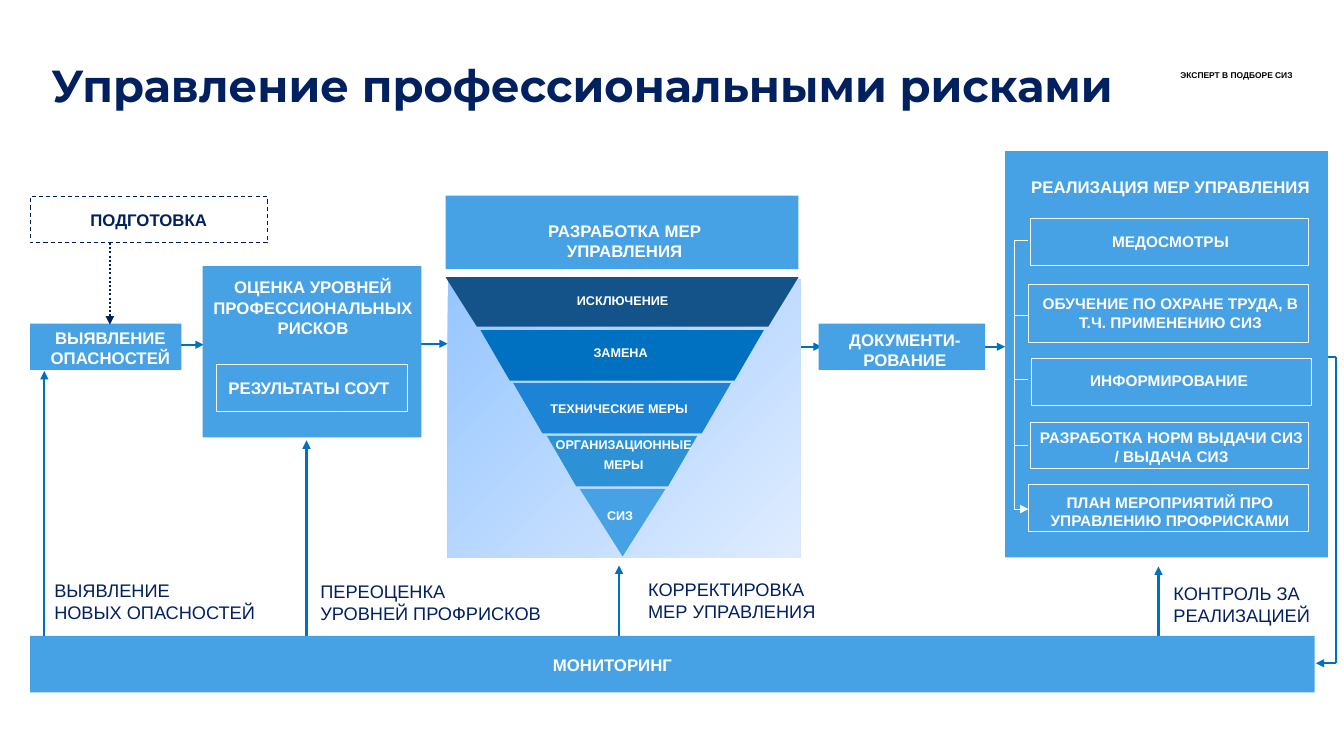
from dataclasses import dataclass
from typing import Optional

from lxml.etree import SubElement
from pptx import Presentation
from pptx.dml.color import RGBColor
from pptx.enum.dml import MSO_LINE
from pptx.enum.shapes import MSO_CONNECTOR, MSO_SHAPE
from pptx.enum.text import PP_ALIGN
from pptx.oxml.ns import qn
from pptx.slide import Slide
from pptx.util import Emu, Inches, Pt

WIDE, HIGH = Inches(13.33), Inches(7.5)
COLS, ROWS = 133.3, 75
INK = {
    "sky": "47A1E5", "blue": "0070C0", "navy": "002060", "white": "FFFFFF",
    "pale": "F2F2F2", "black": "000000", "deep": "13538A", "mid": "1D83D5",
    "soft": "2C92D5", "dawn": "96C6FF", "haze": "DFECFF",
}


@dataclass
class Box:
    x: float
    y: float
    w: float
    h: float
    fill: Optional[str] = "sky"
    edge: Optional[str] = None
    dash: Optional[MSO_LINE] = None
    kind: MSO_SHAPE = MSO_SHAPE.RECTANGLE
    turn: int = 0


@dataclass
class Label:
    x: float
    y: float
    w: float
    h: float
    words: str
    size: float = 12
    ink: str = "white"
    bold: bool = True
    font: str = "Arial"
    align: PP_ALIGN = PP_ALIGN.CENTER
    gap: float = 1
    side: float = 0
    top: float = 0


@dataclass
class Line:
    x: float
    y: float
    x2: float
    y2: float
    ink: str = "blue"
    size: float = 1.5
    tip: bool = True
    dash: Optional[MSO_LINE] = None


def across(cols: float) -> Emu:
    return Emu(round(WIDE * cols / COLS))


def down(rows: float) -> Emu:
    return Emu(round(HIGH * rows / ROWS))


def tint(name: str) -> RGBColor:
    return RGBColor.from_string(INK[name])


def draw_box(slide: Slide, box: Box):
    shape = slide.shapes.add_shape(
        box.kind, across(box.x), down(box.y), across(box.w), down(box.h))
    shape.shadow.inherit = False
    shape.rotation = box.turn
    if box.fill:
        shape.fill.solid()
        shape.fill.fore_color.rgb = tint(box.fill)
    else:
        shape.fill.background()
    if box.edge:
        shape.line.color.rgb = tint(box.edge)
        shape.line.width = Pt(0.75)
        shape.line.dash_style = box.dash
    else:
        shape.line.fill.background()
    return shape


def draw_label(slide: Slide, label: Label) -> None:
    frame = slide.shapes.add_textbox(
        across(label.x), down(label.y), across(label.w), down(label.h)).text_frame
    frame.word_wrap = True
    frame.margin_left = frame.margin_right = across(label.side)
    frame.margin_top = frame.margin_bottom = down(label.top)
    frame.text = label.words
    for para in frame.paragraphs:
        para.alignment = label.align
        para.line_spacing = label.gap
        para.font.name = label.font
        para.font.size = Pt(label.size)
        para.font.bold = label.bold
        para.font.color.rgb = tint(label.ink)


def draw_line(slide: Slide, line: Line) -> None:
    link = slide.shapes.add_connector(
        MSO_CONNECTOR.STRAIGHT, across(line.x), down(line.y),
        across(line.x2), down(line.y2))
    link.line.color.rgb = tint(line.ink)
    link.line.width = Pt(line.size)
    link.line.dash_style = line.dash
    if line.tip:
        SubElement(link.line._get_or_add_ln(), qn("a:tailEnd"), type="triangle")
    SubElement(link._element.spPr, qn("a:effectLst"))


def draw_flow(slide: Slide) -> None:
    for x, y in ((16.2, 34.2), (40.4, 34.1), (77.5, 34.4), (95.7, 34.4)):
        draw_line(slide, Line(x, y, x + 4, y))
    for x, top in ((4.4, 36.8), (30.4, 43.7), (61.4, 56.1), (114.9, 56.2)):
        draw_line(slide, Line(x, 63.1, x, top))
    draw_line(slide, Line(132.5, 35.4, 131.5, 35.4, tip=False))
    draw_line(slide, Line(132.5, 65.8, 132.5, 35.4, tip=False))
    draw_line(slide, Line(132.5, 65.8, 130.5, 65.8))


def draw_stages(slide: Slide) -> None:
    for box in (
        Box(3, 32.1, 15, 4.6), Box(20.1, 26.4, 21.7, 17),
        Box(44.2, 19.4, 35, 7.3), Box(81.2, 32.1, 16.5, 4.6),
        Box(99.7, 15, 32, 40.3), Box(3, 63.1, 127.4, 5.6),
        Box(21.5, 36.2, 18.9, 4.6, edge="pale"),
        Box(3, 19.5, 23.5, 4.6, None, "navy", MSO_LINE.DASH),
    ):
        draw_box(slide, box)
    for label in (
        Label(3, 32.5, 15.9, 4, "ВЫЯВЛЕНИЕ\nОПАСНОСТЕЙ"),
        Label(19.3, 27.5, 23.5, 6.1, "ОЦЕНКА УРОВНЕЙ ПРОФЕССИОНАЛЬНЫХ РИСКОВ"),
        Label(18.9, 37.5, 23.5, 2, "РЕЗУЛЬТАТЫ СОУТ"),
        Label(50.2, 21.9, 23.5, 4, "РАЗРАБОТКА МЕР УПРАВЛЕНИЯ"),
        Label(78, 32.7, 23.5, 4, "ДОКУМЕНТИ-\nРОВАНИЕ"),
        Label(101.7, 17.5, 28.8, 2, "РЕАЛИЗАЦИЯ МЕР УПРАВЛЕНИЯ"),
        Label(49, 65, 23.5, 2, "МОНИТОРИНГ"),
        Label(3, 20.8, 23.5, 2, "ПОДГОТОВКА", ink="navy"),
    ):
        draw_label(slide, label)
    draw_line(slide, Line(10.9, 24.1, 10.9, 32.2, "navy", dash=MSO_LINE.ROUND_DOT))


def draw_funnel(slide: Slide) -> None:
    back = draw_box(slide, Box(44.4, 27.7, 35, 27.6))
    back.fill.gradient()
    back.fill.gradient_angle = 315
    for stop, name in zip(back.fill.gradient_stops, ("dawn", "haze")):
        stop.color.rgb = tint(name)

    rim = slide.shapes.build_freeform(across(44.2), down(27.5))
    rim.add_line_segments([(across(x), down(y)) for x, y in
                           ((79.2, 27.5), (76.2, 32.4), (47.3, 32.4))])
    rim = rim.convert_to_shape()
    rim.shadow.inherit = False
    rim.fill.solid()
    rim.fill.fore_color.rgb = tint("deep")
    rim.line.fill.background()

    for step, (wide, name) in enumerate(((28.1, "blue"), (21.6, "mid"), (14.9, "soft")), 1):
        band = draw_box(slide, Box(61.7 - wide / 2, 27.5 + 5.25 * step, wide, 5, name,
                                   kind=MSO_SHAPE.TRAPEZOID, turn=180))
        band.adjustments[0] = 0.58
    draw_box(slide, Box(57.5, 48.5, 8.5, 6.7,
                        kind=MSO_SHAPE.ISOSCELES_TRIANGLE, turn=180))
    for label in (
        Label(50, 29.1, 23.5, 1.5, "ИСКЛЮЧЕНИЕ", 9),
        Label(49.8, 34.2, 23.5, 1.5, "ЗАМЕНА", 9),
        Label(50.4, 39.2, 22, 2, "ТЕХНИЧЕСКИЕ МЕРЫ", 9, gap=1.35),
        Label(52.9, 42.5, 17.9, 5, "ОРГАНИЗАЦИОННЫЕ МЕРЫ", 9, gap=1.35, side=0.7, top=0.3),
        Label(50.5, 49.9, 22, 2, "СИЗ", 9, gap=1.35),
    ):
        draw_label(slide, label)


def draw_plan(slide: Slide) -> None:
    for box, label in (
        (Box(102.2, 21.7, 27.6, 4.6, edge="pale"),
         Label(102.3, 23, 27.6, 1.9, "МЕДОСМОТРЫ", 11)),
        (Box(102, 28.2, 27.8, 5.8, edge="pale"),
         Label(102.2, 29.2, 27.8, 3.7, "ОБУЧЕНИЕ ПО ОХРАНЕ ТРУДА, В Т.Ч. ПРИМЕНЕНИЮ СИЗ", 11)),
        (Box(102.3, 35.6, 27.8, 4.6, edge="pale"),
         Label(104.2, 36.8, 23.5, 1.9, "ИНФОРМИРОВАНИЕ", 11)),
        (Box(102.2, 41.9, 27.6, 4.6, edge="pale"),
         Label(103.1, 42.5, 26.2, 3.7, "РАЗРАБОТКА НОРМ ВЫДАЧИ СИЗ / ВЫДАЧА СИЗ", 11)),
        (Box(102, 48.1, 27.8, 4.6, edge="pale"),
         Label(102.2, 48.9, 27.7, 3.7, "ПЛАН МЕРОПРИЯТИЙ ПРО УПРАВЛЕНИЮ ПРОФРИСКАМИ", 11)),
    ):
        draw_box(slide, box)
        draw_label(slide, label)
    draw_line(slide, Line(100.6, 23.9, 100.6, 50.5, "white", 0.75, False))
    for y in (23.9, 31.3, 37.7, 44.2, 50.5):
        draw_line(slide, Line(100.6, y, 102, y, "white", 0.75, y == 50.5))


def draw_notes(slide: Slide) -> None:
    for x, y, wide, words in (
        (4.4, 57.5, 25, "ВЫЯВЛЕНИЕ\nНОВЫХ ОПАСНОСТЕЙ"),
        (30.8, 57.6, 28, "ПЕРЕОЦЕНКА\nУРОВНЕЙ ПРОФРИСКОВ"),
        (63.3, 57.4, 44.5, "КОРРЕКТИРОВКА\nМЕР УПРАВЛЕНИЯ"),
        (115.4, 57.8, 17, "КОНТРОЛЬ ЗА\nРЕАЛИЗАЦИЕЙ"),
    ):
        draw_label(slide, Label(x, y, wide, 4.5, words, 13, "navy", False,
                                align=PP_ALIGN.LEFT, side=1))
    draw_label(slide, Label(4.4, 5.4, 111.7, 6.1, "Управление профессиональными рисками",
                            32, "navy", font="Montserrat", align=PP_ALIGN.LEFT,
                            side=0.7, top=0.3))
    draw_label(slide, Label(116.1, 6.5, 14.5, 2, "ЭКСПЕРТ В ПОДБОРЕ СИЗ", 6, "black",
                            align=PP_ALIGN.LEFT, side=1, top=0.5))


def main() -> None:
    deck = Presentation()
    deck.slide_width, deck.slide_height = WIDE, HIGH
    slide = deck.slides.add_slide(deck.slide_layouts[6])
    for draw in (draw_flow, draw_stages, draw_funnel, draw_plan, draw_notes):
        draw(slide)
    deck.save("out.pptx")


if __name__ == "__main__":
    main()
